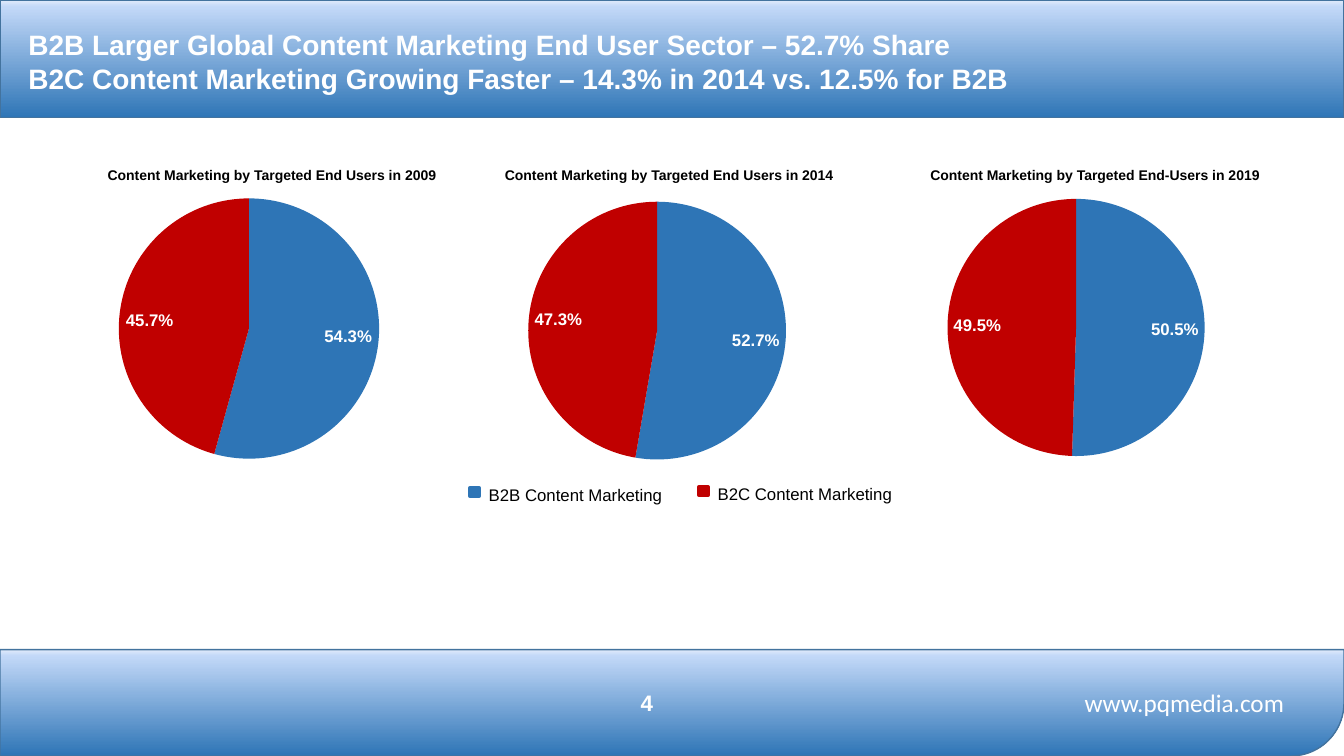
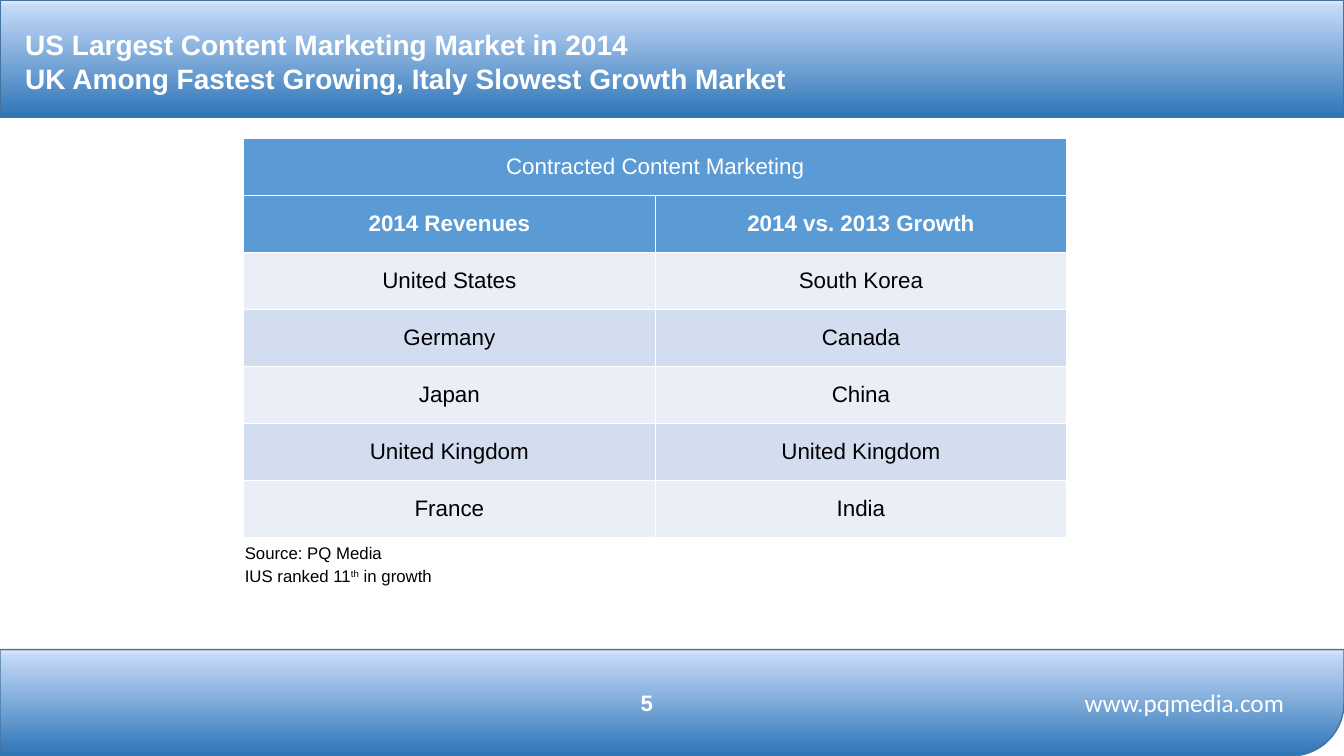
from pptx import Presentation
from pptx.chart.data import CategoryChartData
from pptx.dml.color import RGBColor
from pptx.enum.chart import XL_CHART_TYPE, XL_LABEL_POSITION
from pptx.enum.shapes import MSO_SHAPE
from pptx.enum.text import MSO_ANCHOR, MSO_AUTO_SIZE, PP_ALIGN
from pptx.oxml import parse_xml
from pptx.oxml.ns import nsdecls, qn
from pptx.util import Pt

PIE = XL_CHART_TYPE.PIE
INSIDE_END = XL_LABEL_POSITION.INSIDE_END
ROUND_CORNER, RECT = MSO_SHAPE.ROUND_1_RECTANGLE, MSO_SHAPE.RECTANGLE
TOP, MIDDLE = MSO_ANCHOR.TOP, MSO_ANCHOR.MIDDLE
LEFT, CENTER = PP_ALIGN.LEFT, PP_ALIGN.CENTER
NO_AUTOFIT = MSO_AUTO_SIZE.NONE

COLORS = {
    "white": "FFFFFF", "black": "000000", "blue": "2E75B6", "red": "C00000",
    "sky": "C2D8F8", "mist": "E1EBFB", "band_line": "43739E",
    "header": "5B9BD5", "row_light": "EAEFF7", "row_dark": "D2DEEF",
}
TITLE_ONLY = 5
WIDTH, HEIGHT = 960, 540


def rgb(name):
    return RGBColor.from_string(COLORS[name])


def write(sp, text, size, color="black", bold=False, font="Arial",
          align=LEFT, anchor=TOP):
    """Fill a shape, placeholder or cell with text in one style."""
    tf = sp.text_frame
    tf.text = text
    tf.word_wrap = True
    tf.vertical_anchor = anchor
    for p in tf.paragraphs:
        p.alignment = align
        for r in p.runs:
            r.font.name, r.font.size, r.font.bold = font, Pt(size), bold
            r.font.color.rgb = rgb(color)


prs = Presentation()
prs.slide_width, prs.slide_height = Pt(WIDTH), Pt(HEIGHT)
layout = prs.slide_layouts[TITLE_ONLY]

# Slides with their titles and numbers
titles = [
    (13, 725, "B2B Larger Global Content Marketing End User Sector – 52.7% Share\n"
              "B2C Content Marketing Growing Faster – 14.3% in 2014 vs. 12.5% for B2B"),
    (10.8, 588, "US Largest Content Marketing Market in 2014\n"
                "UK Among Fastest Growing, Italy Slowest Growth Market"),
]
for number, (left, width, title) in enumerate(titles, start=4):
    s = prs.slides.add_slide(layout)
    sp = s.shapes.title
    sp.left, sp.top, sp.width, sp.height = Pt(left), Pt(16), Pt(width), Pt(48)
    write(sp, title, 20, "white", bold=True)
    sp.text_frame.auto_size = NO_AUTOFIT
    sp = s.shapes.add_textbox(Pt(378), Pt(487), Pt(168), Pt(29))
    write(sp, str(number), 16, "white", bold=True, align=CENTER, anchor=MIDDLE)
pie_slide, table_slide = prs.slides

# Bands and web address, moved to the layout that both slides use
shared = []
stops = "".join(
    f'<a:gs pos="{pos}000"><a:srgbClr val="{COLORS[name]}"/></a:gs>'
    for pos, name in [(0, "blue"), (94, "sky"), (100, "mist")])
for top, height, rounding in [(464, 76, 0.5), (0, 84, 0)]:
    sp = pie_slide.shapes.add_shape(ROUND_CORNER, 0, Pt(top), Pt(WIDTH), Pt(height))
    sp.adjustments[0] = rounding
    sp.shadow.inherit = False
    sp.line.color.rgb, sp.line.width = rgb("band_line"), Pt(1)
    sp.fill.gradient()
    spPr = sp.element.spPr
    spPr.find(qn("a:xfrm")).set("flipV", "1")
    spPr.replace(spPr.find(qn("a:gradFill")), parse_xml(
        f'<a:gradFill {nsdecls("a")} rotWithShape="1"><a:gsLst>{stops}</a:gsLst>'
        '<a:lin ang="5400000" scaled="0"/></a:gradFill>'))
    shared.append(sp)
sp = pie_slide.shapes.add_textbox(Pt(732), Pt(487), Pt(228), Pt(29))
write(sp, "www.pqmedia.com", 18, "white", font="Calibri", align=CENTER, anchor=MIDDLE)
shared.append(sp)
for i, sp in enumerate(shared):
    sp.element.xpath(".//p:cNvPr")[0].set("id", str(20 + i))
    layout.shapes.element.insert(2 + i, sp.element)

# Pie charts with captions
pies = [
    ("Content Marketing by Targeted End Users in 2009", 69.8,
     (28.8, 131, 295.2, 211.7), (0.543, 0.457)),
    ("Content Marketing by Targeted End Users in 2014", 353.5,
     (321.8, 134.6, 292.3, 207.4), (0.527, 0.473)),
    ("Content Marketing by Targeted End-Users in 2019", 657.4,
     (621.4, 131, 291.6, 210.2), (0.505, 0.495)),
]
plot_box = "".join(
    f'<c:{tag} val="{val}"/>' for tag, val in [
        ("layoutTarget", "inner"), ("xMode", "edge"), ("yMode", "edge"),
        ("x", 0.19), ("y", 0.01), ("w", 0.63), ("h", 0.96)])
for caption, left, box, values in pies:
    sp = pie_slide.shapes.add_textbox(Pt(left), Pt(115.2), Pt(262), Pt(19.4))
    write(sp, caption, 10, bold=True)

    data = CategoryChartData(number_format="0.0%")
    data.categories = ["1", "2"]
    data.add_series("Series 1", values)
    chart = pie_slide.shapes.add_chart(PIE, *map(Pt, box), data).chart
    chart.has_legend = chart.has_title = False
    chart.font.name, chart.font.size = "Calibri", Pt(10)
    chart.font.color.rgb = rgb("black")
    plot = chart.plots[0]
    plot.vary_by_categories = True
    for i, name in enumerate(["blue", "red"]):
        fill = plot.series[0].points[i].format.fill
        fill.solid()
        fill.fore_color.rgb = rgb(name)
    plot.has_data_labels = True
    labels = plot.data_labels
    labels.show_value, labels.show_percentage = True, False
    labels.number_format, labels.number_format_is_linked = "0.0%", False
    labels.position = INSIDE_END
    labels.font.name, labels.font.size, labels.font.bold = "Arial", Pt(12), True
    labels.font.color.rgb = rgb("white")
    plot_area = chart.element.find(".//" + qn("c:plotArea"))
    for old in plot_area.findall(qn("c:layout")):
        plot_area.remove(old)
    plot_area.insert(0, parse_xml(
        f'<c:layout {nsdecls("c")}><c:manualLayout>{plot_box}</c:manualLayout></c:layout>'))

# Shared legend
for left, top, name, label in [(336, 348.5, "blue", "B2B Content Marketing"),
                               (499.5, 347.8, "red", "B2C Content Marketing")]:
    sp = pie_slide.shapes.add_shape(RECT, Pt(left), Pt(top), Pt(6), Pt(6))
    sp.shadow.inherit = False
    sp.fill.solid()
    sp.fill.fore_color.rgb = sp.line.color.rgb = rgb(name)
    sp.line.width = Pt(3)
    sp = pie_slide.shapes.add_textbox(Pt(left + 6), Pt(top - 6), Pt(150), Pt(22))
    write(sp, label, 12)

# Market ranking table
rows = [
    ("Contracted Content Marketing", ""),
    ("2014 Revenues", "2014 vs. 2013 Growth"),
    ("United States", "South Korea"),
    ("Germany", "Canada"),
    ("Japan", "China"),
    ("United Kingdom", "United Kingdom"),
    ("France", "India"),
]
table = table_slide.shapes.add_table(
    len(rows), 2, Pt(174), Pt(99), Pt(588), Pt(285)).table
table.cell(0, 0).merge(table.cell(0, 1))
for i, row in enumerate(rows):
    is_header = i < 2
    for j, text in enumerate(row):
        cell = table.cell(i, j)
        cell.fill.solid()
        cell.fill.fore_color.rgb = rgb(
            "header" if is_header else ("row_light", "row_dark")[i % 2])
        cell.vertical_anchor = MIDDLE
        if not cell.is_spanned:
            write(cell, text, 16, "white" if is_header else "black",
                  bold=i == 1, align=CENTER, anchor=MIDDLE)

# Notes under the table
for top, note in [(384, "Source: PQ Media"), (400.3, "IUS ranked 11")]:
    sp = table_slide.shapes.add_textbox(Pt(167.8), Pt(top), Pt(160), Pt(22))
    write(sp, note, 12)
p = sp.text_frame.paragraphs[0]
for text, baseline in [("th", "30000"), (" in growth", "0")]:
    r = p.add_run()
    r.text = text
    r.font.name, r.font.size = "Arial", Pt(12)
    r.font.color.rgb = rgb("black")
    r._r.get_or_add_rPr().set("baseline", baseline)

prs.save("out.pptx")
